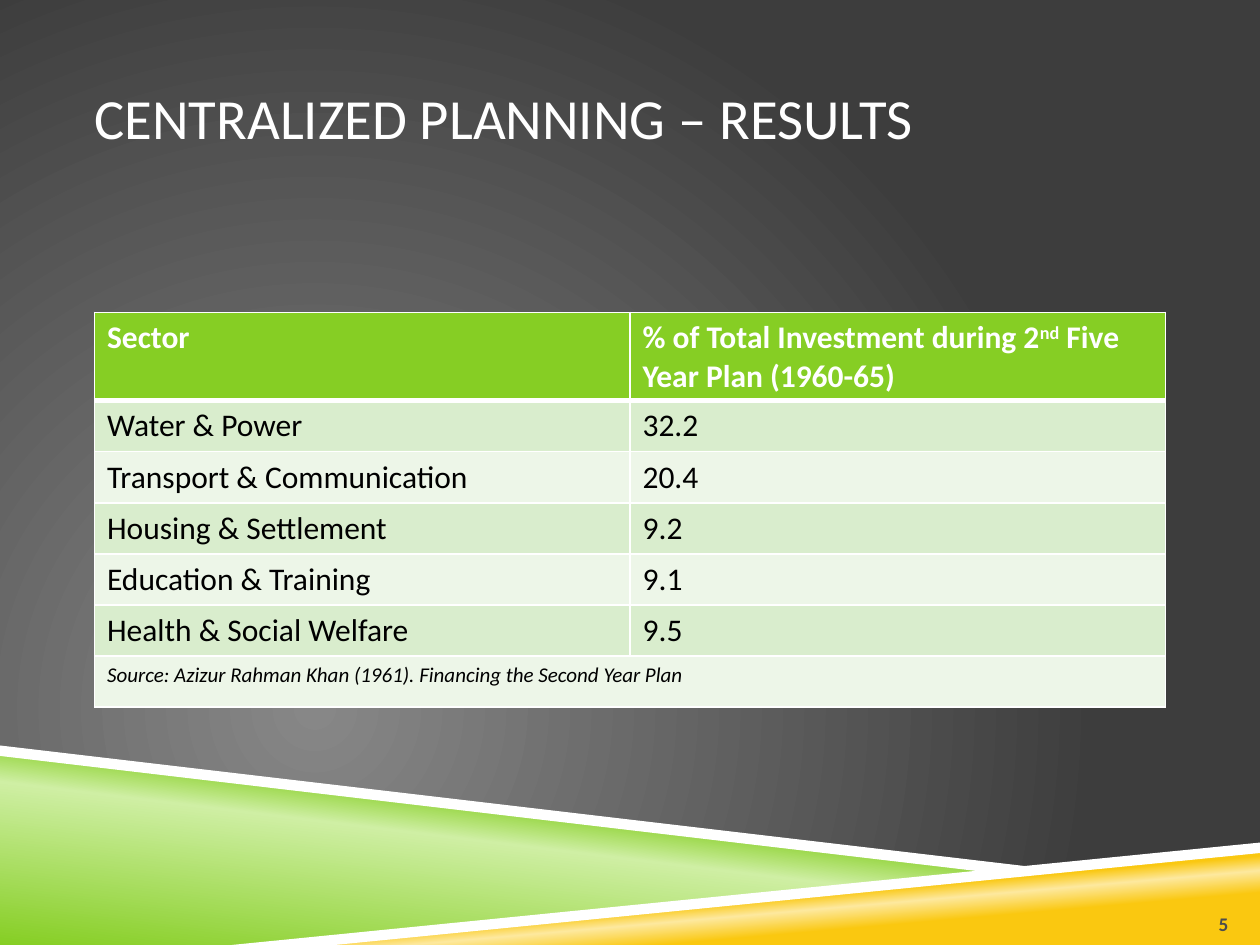
import pptx
import pptx.dml.color
import pptx.enum.text
import pptx.oxml
import pptx.oxml.ns
import pptx.util
from lxml import etree

Pt = pptx.util.Pt
ANCHOR = pptx.enum.text.MSO_ANCHOR
ALIGN = pptx.enum.text.PP_ALIGN
qn = pptx.oxml.ns.qn

# Content
FONT = "Calibri"
COLORS = {
    "white": "FFFFFF", "black": "000000", "number": "4D4D4D",
    "glow": "878787", "dark": "3D3D3D",
    "green": "86CE24", "pale_green": "CFEFA4",
    "yellow": "FAC810", "pale_yellow": "FDE99F",
    "band_dark": "D9EDCD", "band_light": "EDF6E8",
}
TITLE = "CENTRALIZED PLANNING – RESULTS"
PAGE_NUMBER = "5"
HEADER = ("Sector", "% of Total Investment during 2nd Five Year Plan (1960-65)")
ORDINAL = "nd"
ROWS = [
    ("Water & Power", "32.2"),
    ("Transport & Communication", "20.4"),
    ("Housing & Settlement", "9.2"),
    ("Education & Training", "9.1"),
    ("Health & Social Welfare", "9.5"),
]
SOURCE = "Source: Azizur Rahman Khan (1961). Financing the Second Year Plan"

# Geometry in points
WIDTH, HEIGHT = 720, 540
MARGIN = 54
TABLE_TOP, ROW_HEIGHT = 178.5, 29.2

# Bands at the foot: outline, gradient stops (or one colour), angle
BANDS = [
    ([(0, 430), (570, 498), (144, 540), (0, 540)],
     [(0, "green"), (52, "pale_green"), (66, "green")], 277),
    ([(142.5, 540), (720, 484), (720, 540)],
     [(28, "yellow"), (40, "pale_yellow"), (48, "yellow")], 265),
    ([(0, 426), (0, 432), (569, 499), (599, 496.5)], "white", None),
    ([(720, 481.5), (132.5, 540), (191.5, 540), (720, 487.5)], "white", None),
]


def rgb(name):
    return pptx.dml.color.RGBColor.from_string(COLORS[name])


def set_gradient(fill, owner, stops, direction):
    """Give the fill these stops; direction is the a:lin or a:path XML."""
    fill.gradient()
    gradient = owner.find(".//" + qn("a:gradFill"))
    stop_xml = "".join(
        f'<a:gs pos="{place * 1000}"><a:srgbClr val="{COLORS[name]}"/></a:gs>'
        for place, name in stops)
    new = pptx.oxml.parse_xml(
        f'<a:gradFill {pptx.oxml.ns.nsdecls("a")} rotWithShape="1">'
        f'<a:gsLst>{stop_xml}</a:gsLst>{direction}</a:gradFill>')
    gradient.getparent().replace(gradient, new)


def style(font, size, color, bold=False, italic=False):
    font.name, font.size = FONT, Pt(size)
    font.bold, font.italic = bold, italic
    font.color.rgb = rgb(color)


def add_text(slide, box, text, anchor, align, insets, **look):
    shape = slide.shapes.add_textbox(*(Pt(value) for value in box))
    frame = shape.text_frame
    frame.text = text
    frame.word_wrap = True
    frame.vertical_anchor = anchor
    (frame.margin_left, frame.margin_top,
     frame.margin_right, frame.margin_bottom) = (Pt(value) for value in insets)
    paragraph = frame.paragraphs[0]
    paragraph.alignment = align
    style(paragraph.runs[0].font, **look)


def add_band(slide, points, paint, angle):
    # Hundredths of a point keep the corners exact
    corners = [(round(x * 100), round(y * 100)) for x, y in points]
    builder = slide.shapes.build_freeform(*corners[0], scale=Pt(1) / 100)
    builder.add_line_segments(corners[1:], close=True)
    shape = builder.convert_to_shape()
    shape.shadow.inherit = False
    shape.line.fill.background()
    if angle is None:
        shape.fill.solid()
        shape.fill.fore_color.rgb = rgb(paint)
    else:
        set_gradient(shape.fill, shape.element, paint,
                     f'<a:lin ang="{angle * 60000}" scaled="0"/>')


def fill_cell(cell, text, fill, bottom=1, **look):
    paragraph = cell.text_frame.paragraphs[0]
    before, ordinal, after = text.partition("2" + ORDINAL)
    if ordinal:
        for part in (before + "2", ORDINAL, after):
            run = paragraph.add_run()
            run.text = part
        paragraph.runs[1].font._element.set("baseline", "30000")
    else:
        paragraph.text = text
    for run in paragraph.runs:
        style(run.font, **look)
    cell.fill.solid()
    cell.fill.fore_color.rgb = rgb(fill)
    # Borders come before the fill in the cell properties
    properties = cell._tc.get_or_add_tcPr()
    for index, (side, width) in enumerate(
            (("lnL", 1), ("lnR", 1), ("lnT", 1), ("lnB", bottom))):
        line = etree.Element(qn("a:" + side), w=str(Pt(width)))
        solid = etree.SubElement(line, qn("a:solidFill"))
        etree.SubElement(solid, qn("a:srgbClr"), val=COLORS["white"])
        properties.insert(index, line)


def add_sector_table(slide):
    row_count = len(ROWS) + 2
    table = slide.shapes.add_table(
        row_count, 2, Pt(MARGIN), Pt(TABLE_TOP),
        Pt(WIDTH - 2 * MARGIN), Pt(ROW_HEIGHT * row_count)).table
    for column, text in enumerate(HEADER):
        fill_cell(table.cell(0, column), text, "green", bottom=3,
                  size=18, color="white", bold=True)
    for number, values in enumerate(ROWS, start=1):
        band = "band_dark" if number % 2 else "band_light"
        for column, text in enumerate(values):
            fill_cell(table.cell(number, column), text, band,
                      size=18, color="black")
    last = row_count - 1
    table.cell(last, 0).merge(table.cell(last, 1))
    fill_cell(table.cell(last, 0), SOURCE, "band_light",
              size=12, color="black", italic=True)


def main():
    presentation = pptx.Presentation()
    presentation.slide_width, presentation.slide_height = Pt(WIDTH), Pt(HEIGHT)
    slide = presentation.slides.add_slide(presentation.slide_layouts[6])

    # Background glow and bands
    set_gradient(slide.background.fill, slide.element,
                 [(0, "glow"), (100, "dark")],
                 '<a:path path="circle"><a:fillToRect l="50000" t="100000" '
                 'r="100000" b="50000"/></a:path>')
    for band in BANDS:
        add_band(slide, *band)

    # Title, table and page number
    add_text(slide, (MARGIN, 21.6, WIDTH - 2 * MARGIN, 90), TITLE,
             ANCHOR.MIDDLE, ALIGN.LEFT, (0, 3.6, 0, 3.6),
             size=32.4, color="white")
    add_sector_table(slide)
    add_text(slide, (666, 505.5, 36, 28.8), PAGE_NUMBER,
             ANCHOR.BOTTOM, ALIGN.RIGHT, (0, 3.6, 0, 0),
             size=11, color="number", bold=True)
    presentation.save("out.pptx")


if __name__ == "__main__":
    main()
